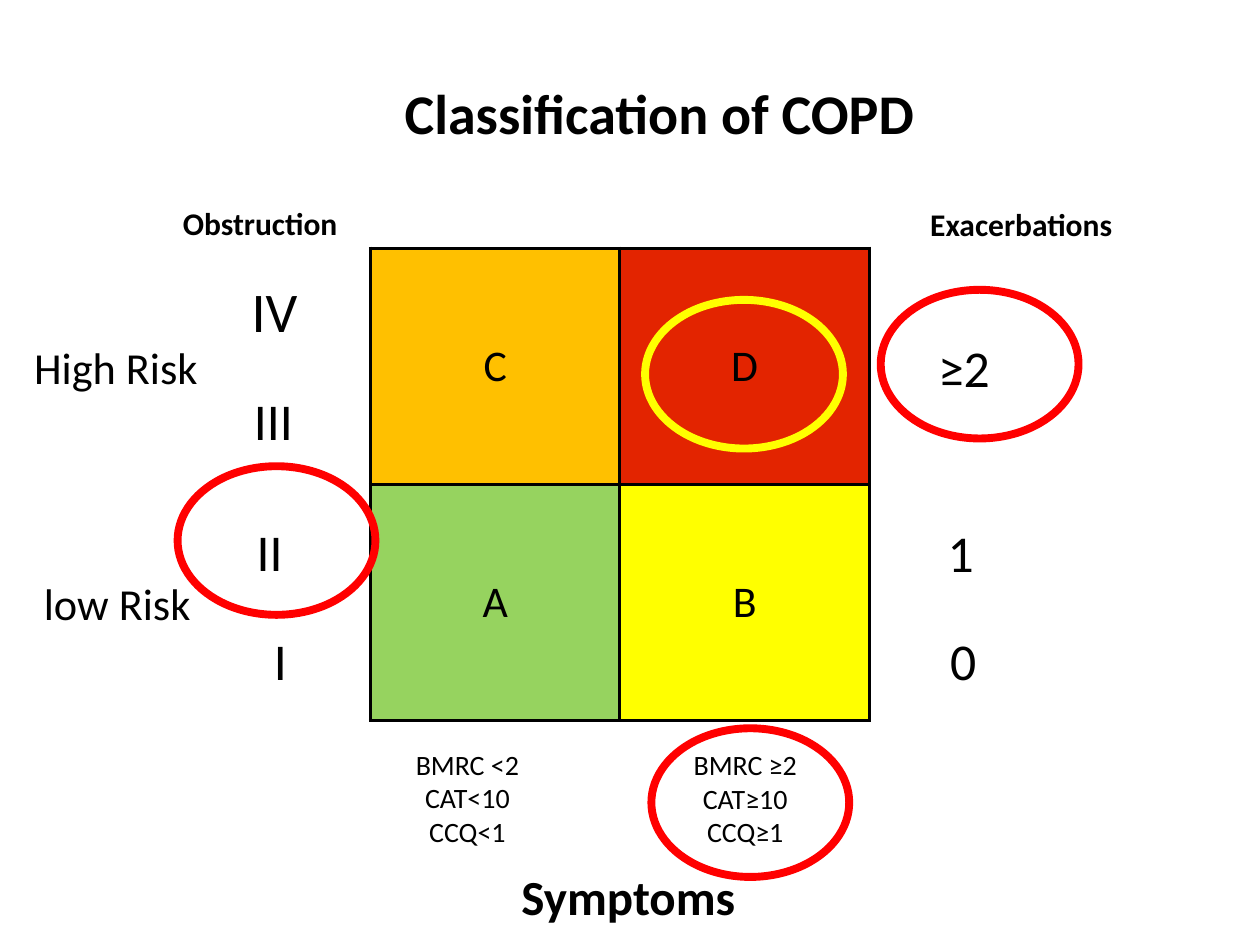
"""Build the COPD classification slide: a risk matrix with axis labels and highlight rings."""
from dataclasses import dataclass

from lxml.etree import SubElement
from pptx import Presentation
from pptx.dml.color import RGBColor
from pptx.enum.shapes import MSO_SHAPE
from pptx.enum.text import MSO_ANCHOR, MSO_AUTO_SIZE, PP_ALIGN
from pptx.oxml.ns import qn
from pptx.util import Inches, Pt


@dataclass(frozen=True)
class Theme:
    font: str = "Calibri"
    ink: str = "000000"
    alert: str = "FF0000"
    yellow: str = "FFFF00"
    orange: str = "FFC000"
    red: str = "E32400"
    green: str = "96D35F"
    title: float = 32
    axis: float = 28
    numeral: float = 29.5
    risk: float = 25.3
    cell: float = 25
    heading: float = 18
    score: float = 16
    inset: float = 0.04
    border: float = 2
    ring: float = 4.5


THEME = Theme()
TITLE = ("Classification of COPD", (2.51, 0.61, 5.45, 0.56))
AXIS = ("Symptoms", (4.04, 6.83, 1.91, 0.57))
MATRIX = [
    [("C", THEME.orange), ("D", THEME.red)],
    [("A", THEME.green), ("B", THEME.yellow)],
]
MATRIX_BOX = (2.94, 1.97, 3.96, 3.75)

LABELS = [
    (["III"], (1.86, 3.05, 0.62, 0.56), THEME.numeral, False),
    (["IV"], (1.86, 2.18, 0.64, 0.56), THEME.title, False),
    (["II"], (1.86, 4.09, 0.56, 0.56), THEME.numeral, False),
    (["I"], (2.07, 4.96, 0.31, 0.56), THEME.numeral, False),
    (["≥2"], (7.34, 2.62, 0.62, 0.58), THEME.numeral, False),
    (["1"], (7.48, 4.1, 0.29, 0.56), THEME.numeral, False),
    (["0"], (7.5, 4.96, 0.29, 0.56), THEME.numeral, False),
    (["Obstruction"], (1.3, 1.46, 1.53, 0.62), THEME.heading, True),
    (["Exacerbations"], (7, 1.6, 2.21, 0.35), THEME.heading, True),
    (["low Risk"], (0.18, 4.54, 1.5, 0.48), THEME.risk, False),
    (["High Risk"], (0.1, 2.67, 1.64, 0.48), THEME.risk, False),
    (["BMRC <2", "CAT<10", "CCQ<1"], (2.94, 5.88, 1.54, 0.9), THEME.score, False),
    (["BMRC ≥2", "CAT≥10", "CCQ≥1"], (5.35, 5.87, 1.13, 0.93), THEME.score, False),
]
RING_SIZE = (1.57, 1.18)
RINGS = [
    ((5.17, 5.78), THEME.alert),
    ((6.99, 2.3), THEME.alert),
    ((1.41, 3.7), THEME.alert),
    ((5.12, 2.38), THEME.yellow),
]


def inches(values):
    return [Inches(value) for value in values]


def write(text_frame, lines, size, bold=False, alignment=PP_ALIGN.CENTER):
    for index, line in enumerate(lines):
        paragraph = text_frame.add_paragraph() if index else text_frame.paragraphs[0]
        paragraph.alignment = alignment
        run = paragraph.add_run()
        run.text = line
        run.font.name = THEME.font
        run.font.size = Pt(size)
        run.font.bold = bold
        run.font.color.rgb = RGBColor.from_string(THEME.ink)


def set_insets(target):
    target.margin_left = target.margin_right = Inches(THEME.inset)
    target.margin_top = target.margin_bottom = Inches(THEME.inset)
    target.vertical_anchor = MSO_ANCHOR.MIDDLE


def fill_label(shape, lines, size, bold):
    text_frame = shape.text_frame
    text_frame.auto_size = MSO_AUTO_SIZE.NONE
    text_frame.word_wrap = False
    set_insets(text_frame)
    write(text_frame, lines, size, bold)


def add_title(slide):
    text, box = TITLE
    title = slide.shapes.title
    title.left, title.top, title.width, title.height = inches(box)
    fill_label(title, [text], THEME.title, True)


def add_axis(slide):
    text, box = AXIS
    text_frame = slide.shapes.add_textbox(*inches(box)).text_frame
    text_frame.word_wrap = False
    text_frame.auto_size = MSO_AUTO_SIZE.SHAPE_TO_FIT_TEXT
    write(text_frame, [text], THEME.axis, True, PP_ALIGN.LEFT)


def add_label(slide, lines, box, size, bold):
    left, top, width, height = inches(box)
    right, bottom = left + width, top + height
    outline = slide.shapes.build_freeform(left, top)
    outline.add_line_segments([(right, top), (right, bottom), (left, bottom)])
    label = outline.convert_to_shape()
    label.shadow.inherit = False
    label.fill.background()
    label.line.fill.background()
    fill_label(label, lines, size, bold)


def set_borders(cell):
    properties = cell._tc.get_or_add_tcPr()
    for side in ("a:lnL", "a:lnR", "a:lnT", "a:lnB"):
        line = SubElement(properties, qn(side), w=str(Pt(THEME.border)))
        fill = SubElement(line, qn("a:solidFill"))
        SubElement(fill, qn("a:srgbClr"), val=THEME.ink)


def add_matrix(slide):
    rows, columns = len(MATRIX), len(MATRIX[0])
    table = slide.shapes.add_table(rows, columns, *inches(MATRIX_BOX)).table
    table.first_row = table.horz_banding = False
    for row, entries in enumerate(MATRIX):
        for column, (letter, color) in enumerate(entries):
            cell = table.cell(row, column)
            set_insets(cell)
            set_borders(cell)
            cell.fill.solid()
            cell.fill.fore_color.rgb = RGBColor.from_string(color)
            write(cell.text_frame, [letter], THEME.cell)


def add_ring(slide, origin, color):
    ring = slide.shapes.add_shape(MSO_SHAPE.OVAL, *inches((*origin, *RING_SIZE)))
    ring.shadow.inherit = False
    ring.fill.background()
    ring.line.color.rgb = RGBColor.from_string(color)
    ring.line.width = Pt(THEME.ring)


def main():
    presentation = Presentation()
    presentation.slide_width, presentation.slide_height = inches((10, 7.5))
    slide = presentation.slides.add_slide(presentation.slide_layouts[5])
    add_title(slide)
    add_matrix(slide)
    for lines, box, size, bold in LABELS:
        add_label(slide, lines, box, size, bold)
    add_axis(slide)
    for origin, color in RINGS:
        add_ring(slide, origin, color)
    presentation.save("out.pptx")


if __name__ == "__main__":
    main()
